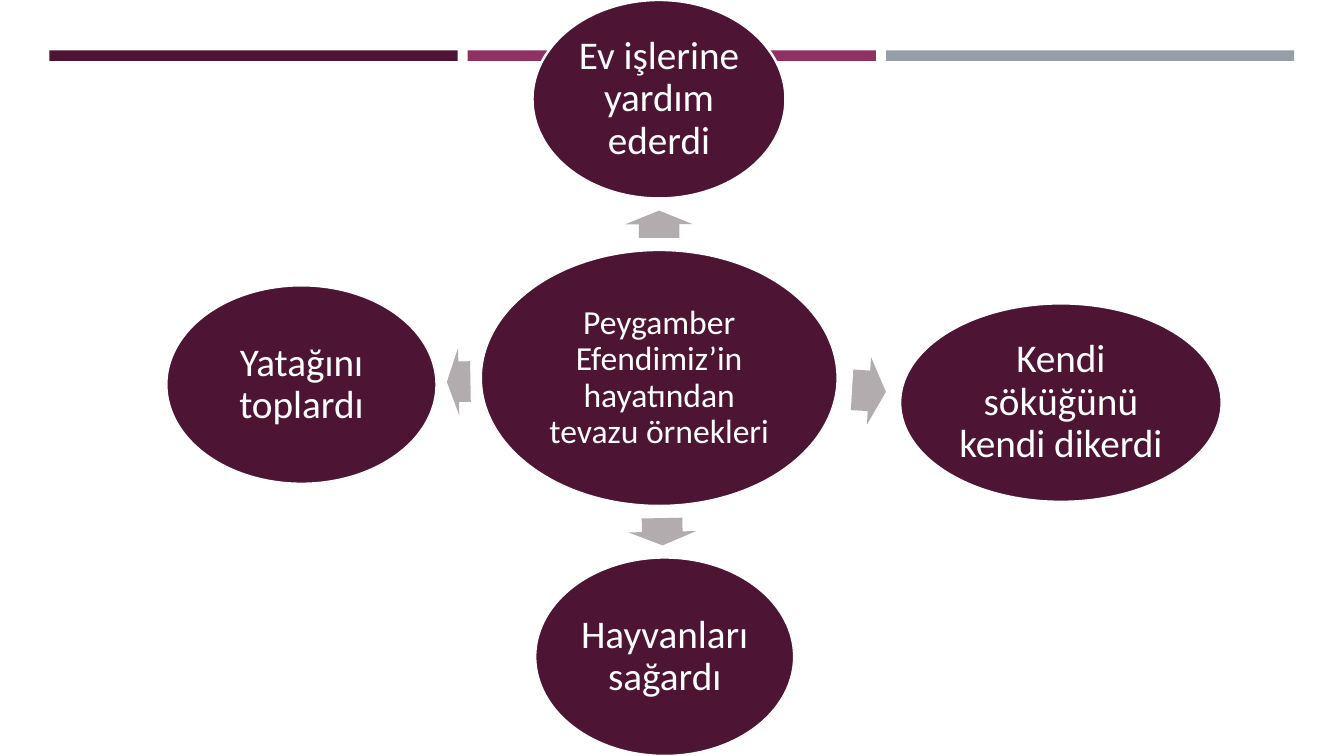
"""Build a slide with a central idea and four examples radiating from it."""
from math import atan2, cos, degrees, hypot, sin

from pptx import Presentation
from pptx.dml.color import RGBColor
from pptx.enum import shapes, text
from pptx.util import Pt

PLUM, BERRY, SLATE, GREY, WHITE = "4D1434", "903163", "969FA7", "B2ACAE", "FFFFFF"
BARS = [PLUM, BERRY, SLATE]
BAR_LEFT, BAR_TOP, BAR_WIDTH, BAR_HEIGHT, BAR_PITCH = 35.3, 36, 291.6, 7.5, 298.8

# Each oval: words, centre x, centre y, width, height, text size, inset
HUB = ("Peygamber Efendimiz’in hayatından tevazu örnekleri",
       470.9, 270, 254.9, 182.9, 24, 2.4)
EXAMPLES = [
    ("Ev işlerine yardım ederdi", 470.7, 70.9, 180.7, 141.8, 28, 2.8),
    ("Kendi söküğünü kendi dikerdi", 757.8, 287.6, 229.7, 141.8, 28, 2.8),
    ("Hayvanları sağardı", 474.8, 469.1, 185, 141.8, 28, 2.8),
    ("Yatağını toplardı", 215.3, 274.7, 193, 141.8, 28, 2.8),
]
ARROW_SHARE, ARROW_WIDTH = 0.53, 48.3


def colour(value):
    return RGBColor.from_string(value)


def apply(target, values):
    for name, value in values.items():
        setattr(target, name, value)


def add_shape(page, kind, x, y, width, height, fill):
    shape = page.shapes.add_shape(
        kind, Pt(x - width / 2), Pt(y - height / 2), Pt(width), Pt(height))
    shape.shadow.inherit = False
    shape.fill.solid()
    shape.fill.fore_color.rgb = colour(fill)
    shape.line.fill.background()
    return shape


def add_oval(page, words, x, y, width, height, size, inset):
    oval = add_shape(page, shapes.MSO_SHAPE.OVAL, x, y, width, height, PLUM)
    oval.line.color.rgb = colour(WHITE)
    oval.line.width = Pt(1.75)
    frame = oval.text_frame
    margins = {f"margin_{side}": Pt(inset) for side in ("left", "top", "right", "bottom")}
    apply(frame, {"word_wrap": True, "vertical_anchor": text.MSO_ANCHOR.MIDDLE, **margins})
    para = frame.paragraphs[0]
    apply(para, {"alignment": text.PP_ALIGN.CENTER, "line_spacing": 0.9})
    span = para.add_run()
    span.text = words
    apply(span.font, {"name": "Calibri", "size": Pt(size)})
    span.font.color.rgb = colour(WHITE)


def reach(oval, angle):
    """Return the distance from an oval's centre to its edge."""
    width, height = oval[3:5]
    return 1 / hypot(2 * cos(angle) / width, 2 * sin(angle) / height)


def add_arrow(page, start, end):
    dx, dy = end[1] - start[1], end[2] - start[2]
    angle = atan2(dy, dx)
    near, far = reach(start, angle), hypot(dx, dy) - reach(end, angle)
    middle = (near + far) / 2
    arrow = add_shape(
        page, shapes.MSO_SHAPE.RIGHT_ARROW,
        start[1] + middle * cos(angle), start[2] + middle * sin(angle),
        (far - near) * ARROW_SHARE, ARROW_WIDTH, GREY)
    arrow.rotation = degrees(angle) % 360
    arrow.adjustments[0] = 0.6
    arrow.adjustments[1] = 0.5


def main():
    deck = Presentation()
    apply(deck, {"slide_width": Pt(960), "slide_height": Pt(540)})
    page = deck.slides.add_slide(deck.slide_layouts[6])
    for index, fill in enumerate(BARS):
        add_shape(page, shapes.MSO_SHAPE.RECTANGLE,
                  BAR_LEFT + index * BAR_PITCH + BAR_WIDTH / 2, BAR_TOP + BAR_HEIGHT / 2,
                  BAR_WIDTH, BAR_HEIGHT, fill)
    add_oval(page, *HUB)
    for example in EXAMPLES:
        add_arrow(page, HUB, example)
        add_oval(page, *example)
    deck.save("out.pptx")


if __name__ == "__main__":
    main()
